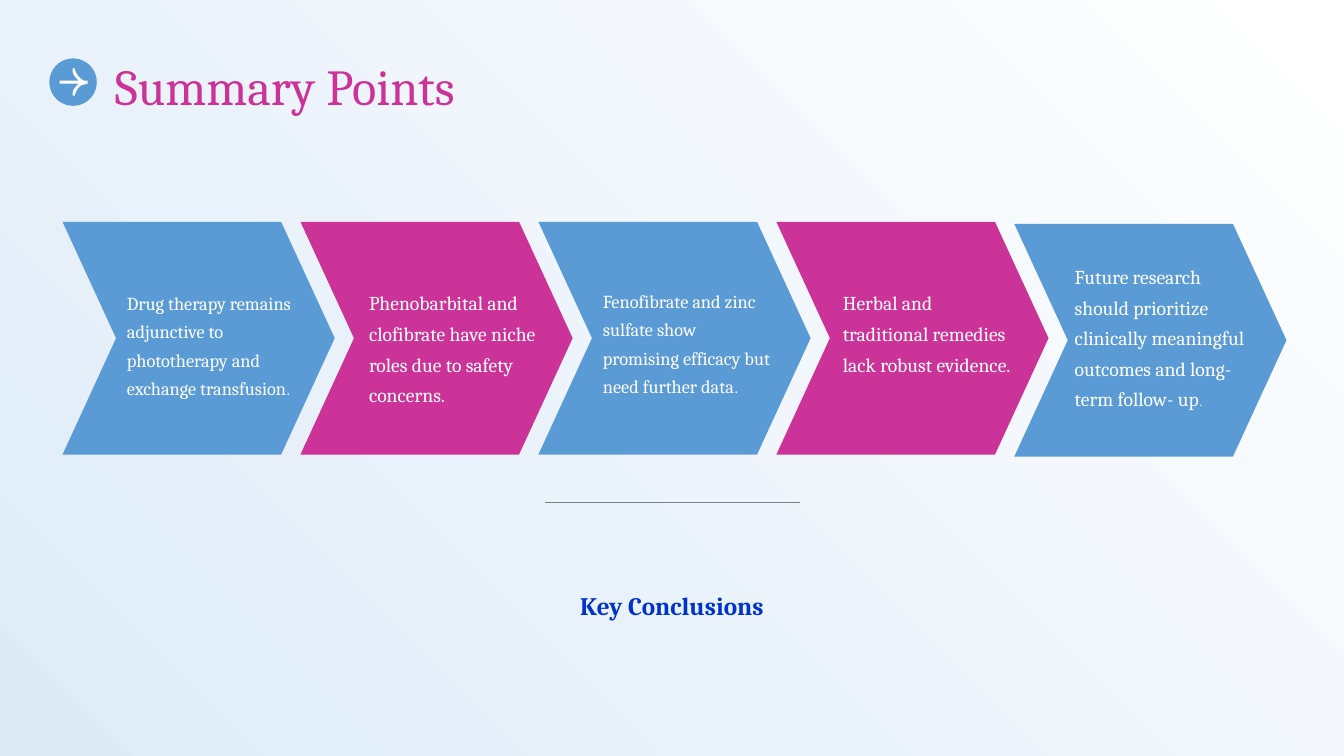
"""Build the Summary Points slide with five chevrons and a closing line."""
from lxml.etree import SubElement
from pptx import Presentation
from pptx.dml.color import RGBColor
from pptx.enum.shapes import MSO_CONNECTOR, MSO_SHAPE
from pptx.enum.text import MSO_ANCHOR, PP_ALIGN
from pptx.oxml.ns import qn
from pptx.util import Inches, Pt

COLORS = {"white": "FFFFFF", "pale": "DEEBF7", "blue": "5B9BD5",
          "pink": "CC3399", "navy": "0033CC", "gray": "808080"}


def paint(shape, color):
    shape.shadow.inherit = False
    shape.fill.solid()
    shape.fill.fore_color.rgb = RGBColor.from_string(COLORS[color])
    shape.line.fill.background()


def write(place, runs, color, space, anchor=MSO_ANCHOR.TOP):
    box = slide.shapes.add_textbox(*[Inches(n) for n in place])
    frame = box.text_frame
    frame.word_wrap = True
    frame.vertical_anchor = anchor
    frame.margin_left = frame.margin_right = 0
    frame.margin_top = frame.margin_bottom = 0
    line = frame.paragraphs[0]
    line.line_spacing = space
    for text, size, face in runs:
        run = line.add_run()
        run.text = text
        run.font.size = Pt(size)
        run.font.name = face
        run.font.color.rgb = RGBColor.from_string(COLORS[color])
    return line


deck = Presentation()
deck.slide_width, deck.slide_height = Inches(13.33), Inches(7.5)
slide = deck.slides.add_slide(deck.slide_layouts[6])

back = slide.shapes.add_shape(MSO_SHAPE.RECTANGLE, 0, 0,
                              deck.slide_width, deck.slide_height)
paint(back, "white")
back.fill.gradient()
back.fill.gradient_angle = 225
for stop, color in zip(back.fill.gradient_stops, ("white", "pale")):
    stop.color.rgb = RGBColor.from_string(COLORS[color])

rule = slide.shapes.add_connector(MSO_CONNECTOR.STRAIGHT, Inches(5.41),
                                  Inches(4.98), Inches(7.93), Inches(4.98))
rule.line.color.rgb = RGBColor.from_string(COLORS["gray"])
rule.line.width = Pt(0.5)
SubElement(rule.line._get_or_add_ln().getparent(), qn("a:effectLst"))

close = write((1.28, 5.22, 10.77, 0.94), [("Key Conclusions", 18, "Cambria")],
              "navy", 1.5, MSO_ANCHOR.BOTTOM)
close.alignment = PP_ALIGN.CENTER
close.runs[0].font.bold = True

points = [
    (2.2, 1.26, 2.83, 1.74, [
        ("Drug therapy remains adjunctive to phototherapy and exchange "
         "transfusion", 13.1, "Cambria"), (".", 13.1, "Manrope")]),
    (2.2, 3.66, 2.82, 1.68, [
        ("Phenobarbital and clofibrate have niche roles due to safety "
         "concerns.", 14, "Cambria")]),
    (2.2, 5.98, 2.81, 1.71, [
        ("Fenofibrate and zinc sulfate show promising efficacy but need "
         "further data", 13.1, "Cambria"), (".", 13.1, "Manrope")]),
    (2.2, 8.36, 2.82, 1.68, [
        ("Herbal and traditional remedies lack robust evidence.",
         14, "Cambria")]),
    (2.22, 10.66, 2.56, 1.74, [
        ("Future research should prioritize clinically meaningful outcomes "
         "and long- term follow- up", 14, "Cambria"),
        (".", 10.8, "Manrope")]),
]
for i, (top, left, high, width, runs) in enumerate(points):
    step = slide.shapes.add_shape(MSO_SHAPE.CHEVRON, Inches(0.62 + 2.36 * i),
                                  Inches(top), Inches(2.7), Inches(2.31))
    step.adjustments[0] = 0.23
    paint(step, ("blue", "pink")[i % 2])
    write((left, high, width, 1.42), runs, "white", 1.3)

write((1.14, 0.58, 11.45, 0.47), [("Summary Points", 36, "Cambria")],
      "pink", 1.1, MSO_ANCHOR.MIDDLE)

disc = slide.shapes.add_shape(MSO_SHAPE.OVAL, Inches(0.49), Inches(0.58),
                              Inches(0.47), Inches(0.47))
paint(disc, "blue")
pen = slide.shapes.build_freeform(59, 80, scale=Inches(0.01))
pen.add_line_segments([
    (78, 80), (75, 77), (73, 74), (72, 71), (72, 68), (74, 68), (75, 71),
    (77, 75), (80, 78), (83, 79.5), (87, 80.3), (87, 82.9), (83, 83.5),
    (80, 85), (77, 88), (75, 92), (74, 95), (72, 95), (72, 92), (73, 89),
    (75, 86), (78, 83), (59, 83)])
arrow = pen.convert_to_shape()
paint(arrow, "white")

deck.save("out.pptx")
